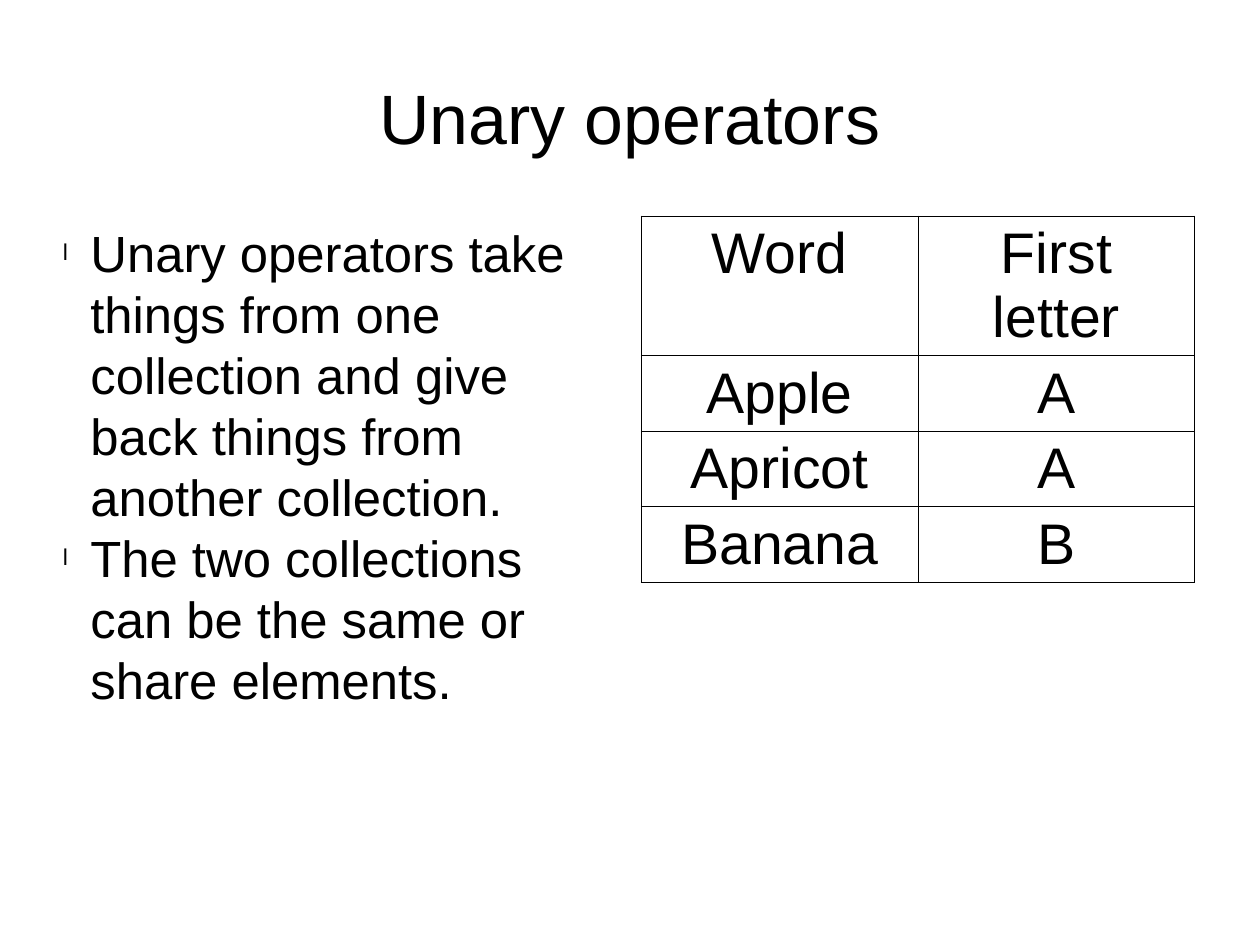
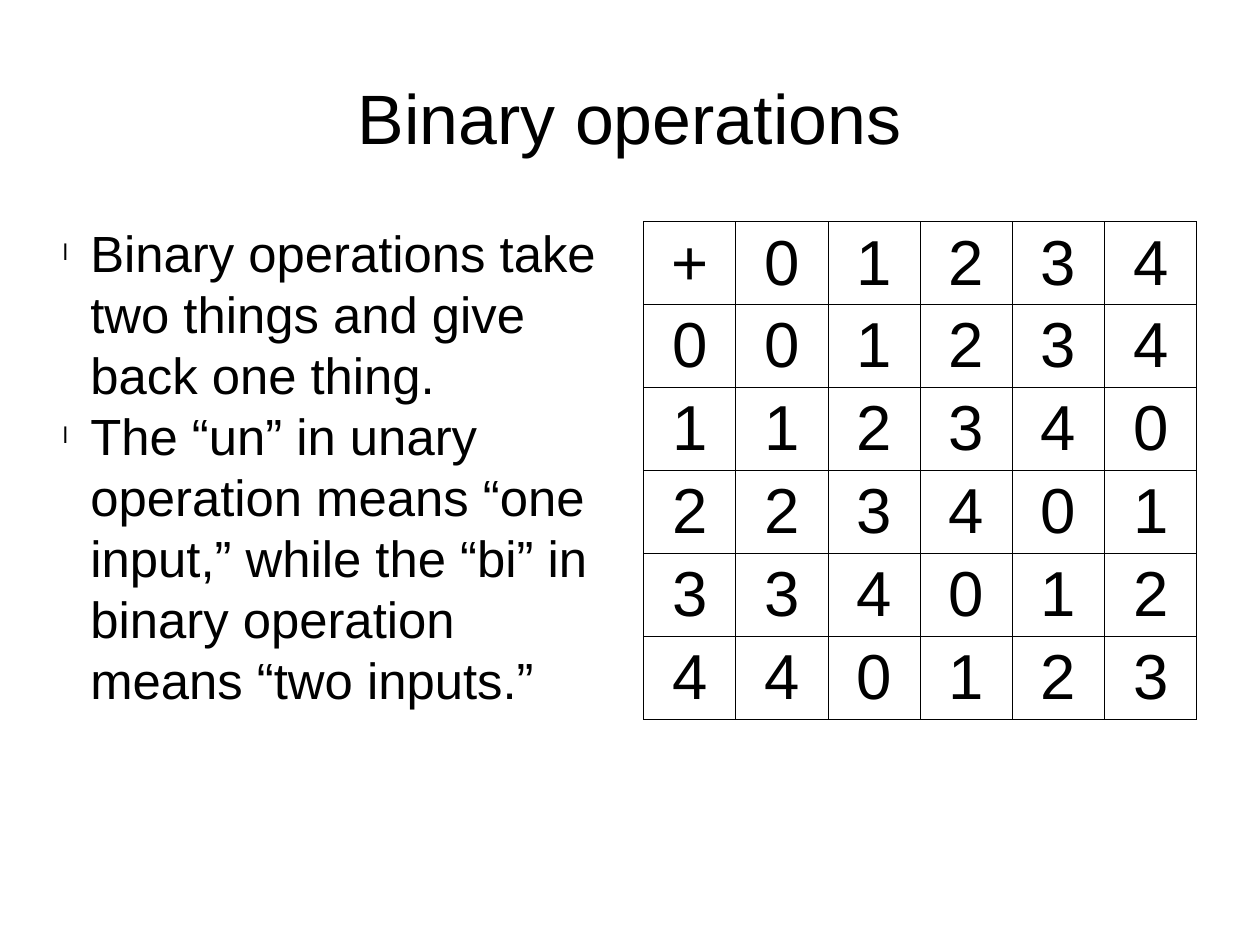
from dataclasses import dataclass

from lxml.etree import SubElement
from pptx import Presentation
from pptx.dml.color import RGBColor
from pptx.enum.text import MSO_ANCHOR, MSO_AUTO_SIZE, PP_ALIGN
from pptx.oxml.ns import qn
from pptx.util import Inches, Pt


@dataclass(frozen=True)
class Theme:
    font: str = "Arial"
    ink: str = "000000"
    paper: str = "FFFFFF"
    title_size: int = 44
    list_size: int = 32
    leading: float = 1.2
    border: float = 0.75
    bullet_indent: float = 0.24


theme = Theme()


def write(paragraph, text, *, size, align=PP_ALIGN.LEFT, leading=None, bullet=False):
    """Fill a paragraph; leading is a multiple of the type size."""
    paragraph.alignment = align
    paragraph.space_before = Pt(0)
    if leading:
        paragraph.line_spacing = Pt(size * leading)
    if bullet:
        properties = paragraph._p.get_or_add_pPr()
        indent = Inches(theme.bullet_indent)
        properties.set("marL", str(indent))
        properties.set("indent", str(-indent))
        SubElement(properties, qn("a:buSzPct"), val="45000")
        SubElement(properties, qn("a:buFont"), typeface=theme.font)
        SubElement(properties, qn("a:buChar"), char="l")
    run = paragraph.add_run()
    run.text = text
    run.font.name = theme.font
    run.font.size = Pt(size)
    run.font.color.rgb = RGBColor.from_string(theme.ink)


def draw_borders(cell):
    properties = cell._tc.get_or_add_tcPr()
    for side in ("lnL", "lnR", "lnT", "lnB"):
        line = SubElement(properties, qn(f"a:{side}"), w=str(Pt(theme.border)))
        fill = SubElement(line, qn("a:solidFill"))
        SubElement(fill, qn("a:srgbClr"), val=theme.ink)


digits = range(5)
addition_mod_5 = [["+", *map(str, digits)]] + [
    [str(a), *(str((a + b) % 5) for b in digits)] for a in digits
]

lessons = [
    {
        "title": "Unary operators",
        "points": [
            "Unary operators take things from one collection and give back "
            "things from another collection.",
            "The two collections can be the same or share elements.",
        ],
        "rows": [["Word", "First letter"], ["Apple", "A"], ["Apricot", "A"], ["Banana", "B"]],
        "place": (5.61, 1.89, 4.84),
        "heights": [1.22] + [0.66] * 3,
        "size": 36,
    },
    {
        "title": "Binary operations",
        "points": [
            "Binary operations take two things and give back one thing.",
            "The “un” in unary operation means “one input,” while the “bi” in "
            "binary operation means “two inputs.”",
        ],
        "rows": addition_mod_5,
        "place": (5.63, 1.94, 4.84),
        "heights": [4.35 / 6] * 6,
        "size": 40,
    },
]

deck = Presentation()
deck.slide_width = Inches(11.02)
deck.slide_height = Inches(8.27)

background = deck.slide_master.background.fill
background.solid()
background.fore_color.rgb = RGBColor.from_string(theme.paper)

for lesson in lessons:
    slide = deck.slides.add_slide(deck.slide_layouts[1])
    title, points = slide.shapes.title, slide.placeholders[1]

    for holder, place, anchor in (
        (title, (0.55, 0.33, 9.92, 1.38), MSO_ANCHOR.MIDDLE),
        (points, (0.55, 1.94, 4.84, 4.79), MSO_ANCHOR.TOP),
    ):
        holder.left, holder.top, holder.width, holder.height = map(Inches, place)
        frame = holder.text_frame
        frame.word_wrap = True
        frame.auto_size = MSO_AUTO_SIZE.NONE
        frame.vertical_anchor = anchor
        frame.margin_left = frame.margin_right = 0
        frame.margin_top = frame.margin_bottom = 0

    write(title.text_frame.paragraphs[0], lesson["title"], size=theme.title_size,
          align=PP_ALIGN.CENTER, leading=theme.leading)

    for index, point in enumerate(lesson["points"]):
        frame = points.text_frame
        paragraph = frame.add_paragraph() if index else frame.paragraphs[0]
        write(paragraph, point, size=theme.list_size, leading=theme.leading, bullet=True)

    rows, heights = lesson["rows"], lesson["heights"]
    left, top, width = map(Inches, lesson["place"])
    table = slide.shapes.add_table(
        len(rows), len(rows[0]), left, top, width, Inches(sum(heights))
    ).table
    table.first_row = table.horz_banding = False
    for row, height, texts in zip(table.rows, heights, rows):
        row.height = Inches(height)
        for cell, text in zip(row.cells, texts):
            draw_borders(cell)
            cell.fill.background()
            write(cell.text_frame.paragraphs[0], text, size=lesson["size"],
                  align=PP_ALIGN.CENTER)

deck.save("out.pptx")
